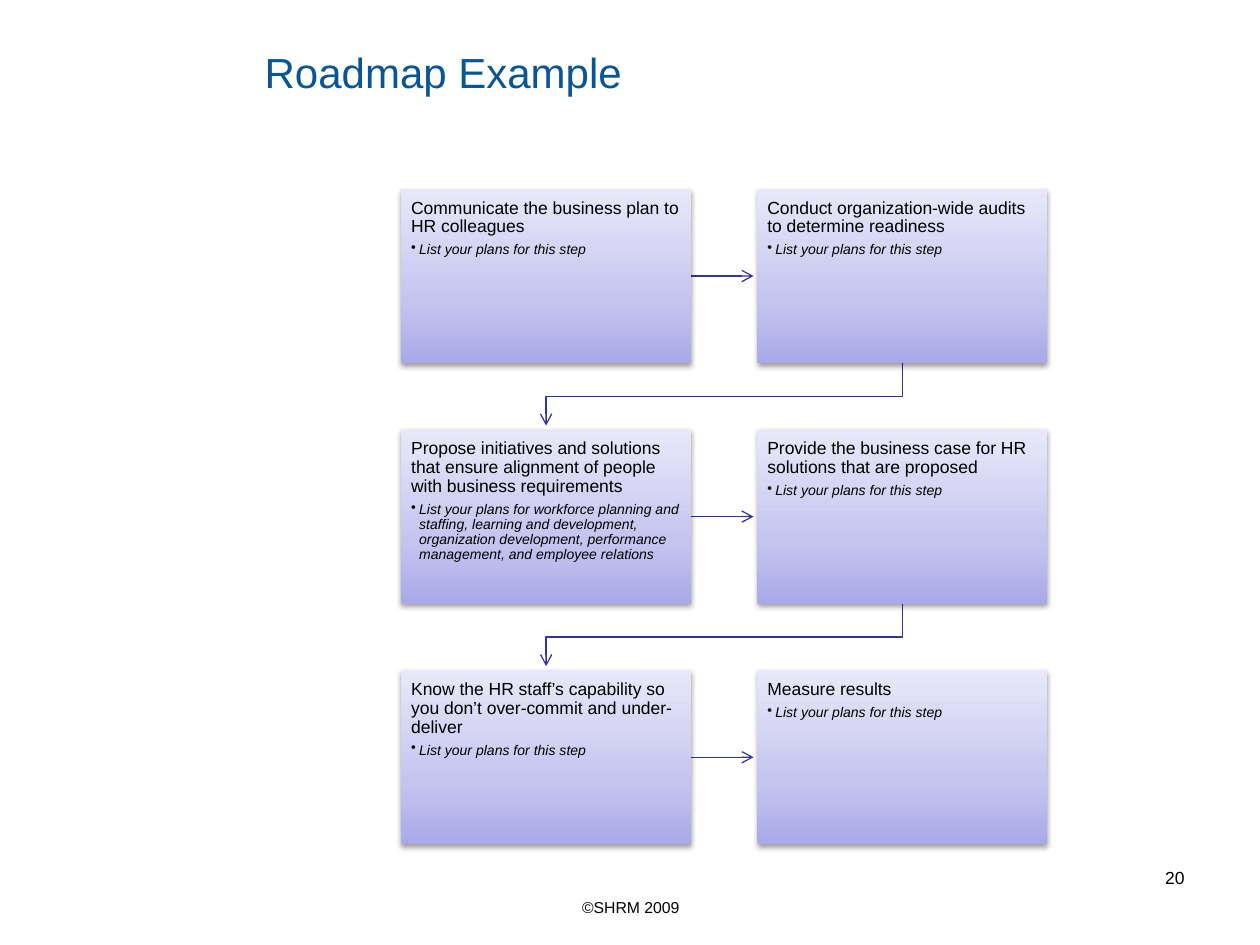
from dataclasses import dataclass

from lxml.etree import SubElement
from pptx import Presentation
from pptx.dml.color import RGBColor
from pptx.enum.shapes import MSO_CONNECTOR, MSO_SHAPE
from pptx.enum.text import MSO_ANCHOR, PP_ALIGN
from pptx.oxml.ns import qn
from pptx.util import Cm, Pt


@dataclass(frozen=True)
class Theme:
    font: str = "Arial"
    title_color: str = "0B5594"
    text_color: str = "000000"
    arrow_color: str = "333399"
    gradient: tuple = ((0, "A9A9E9"), (35, "C4C4EF"), (100, "E8E8FA"))
    title_size: float = 24
    step_size: float = 10
    plan_size: float = 8
    footer_size: float = 9
    number_size: float = 10
    arrow_width: float = 0.75


PLAN = "List your plans for this step"
STEPS = [
    ("Communicate the business plan to HR colleagues", PLAN),
    ("Conduct organization-wide audits to determine readiness", PLAN),
    ("Propose initiatives and solutions that ensure alignment of people "
     "with business requirements",
     "List your plans for workforce planning and staffing, learning and "
     "development, organization development, performance management, "
     "and employee relations"),
    ("Provide the business case for HR solutions that are proposed", PLAN),
    ("Know the HR staff’s capability so you don’t over-commit and "
     "under-deliver", PLAN),
    ("Measure results", PLAN),
]

# Step grid, in centimetres
COLUMNS = 2
LEFT, TOP = 8.09, 3.81
WIDTH, HEIGHT = 5.84, 3.51
PITCH_X, PITCH_Y = 7.18, 4.85
ARROW_GAP = 0.08
BEND = 0.67


def set_all(target, values):
    for name, value in values.items():
        setattr(target, name, value)


class RoadmapSlide:
    def __init__(self, presentation, theme):
        self.theme = theme
        self.slide = presentation.slides.add_slide(presentation.slide_layouts[5])
        self.shapes = self.slide.shapes

    def add_words(self, paragraph, text, size, color=None, italic=False):
        run = paragraph.add_run()
        run.text = text
        set_all(run.font, {"name": self.theme.font, "size": Pt(size), "italic": italic})
        run.font.color.rgb = RGBColor.from_string(color or self.theme.text_color)

    def title(self, text, left, top, width, height):
        heading = self.shapes.title
        set_all(heading, {"left": Cm(left), "top": Cm(top),
                          "width": Cm(width), "height": Cm(height)})
        set_all(heading.text_frame, {"word_wrap": True,
                                     "vertical_anchor": MSO_ANCHOR.MIDDLE})
        paragraph = heading.text_frame.paragraphs[0]
        set_all(paragraph, {"alignment": PP_ALIGN.LEFT, "space_before": Pt(0)})
        self.add_words(paragraph, text, self.theme.title_size, self.theme.title_color)

    def label(self, text, left, top, width, height, size, alignment):
        box = self.shapes.add_textbox(Cm(left), Cm(top), Cm(width), Cm(height))
        box.text_frame.word_wrap = True
        paragraph = box.text_frame.paragraphs[0]
        paragraph.alignment = alignment
        self.add_words(paragraph, text, size)

    def step(self, heading, plan, left, top):
        card = self.shapes.add_shape(MSO_SHAPE.RECTANGLE, Cm(left), Cm(top),
                                     Cm(WIDTH), Cm(HEIGHT))
        card.line.fill.background()
        self.shade(card)
        self.drop_shadow(card)

        frame = card.text_frame
        margins = ("margin_left", "margin_top", "margin_right", "margin_bottom")
        set_all(frame, {"word_wrap": True, "vertical_anchor": MSO_ANCHOR.TOP,
                        **dict.fromkeys(margins, Cm(0.2))})
        head = frame.paragraphs[0]
        set_all(head, {"alignment": PP_ALIGN.LEFT, "line_spacing": 0.9,
                       "space_after": Pt(3.5)})
        self.add_words(head, heading, self.theme.step_size)

        item = frame.add_paragraph()
        self.bullet(item)
        set_all(item, {"level": 1, "alignment": PP_ALIGN.LEFT,
                       "line_spacing": 0.9, "space_after": Pt(1.2)})
        self.add_words(item, plan, self.theme.plan_size, italic=True)

    def shade(self, card):
        card.fill.gradient()
        card.fill.gradient_angle = 90
        stops = card._element.spPr.find(qn("a:gradFill")).find(qn("a:gsLst"))
        for stop in list(stops):
            stops.remove(stop)
        for percent, color in self.theme.gradient:
            stop = SubElement(stops, qn("a:gs"), pos=str(percent * 1000))
            SubElement(stop, qn("a:srgbClr"), val=color)

    def drop_shadow(self, card):
        card.shadow.inherit = False
        effects = card._element.spPr.find(qn("a:effectLst"))
        shadow = SubElement(effects, qn("a:outerShdw"), blurRad=str(Pt(3.1)),
                            dist=str(Pt(1.6)), dir="5400000", rotWithShape="0")
        color = SubElement(shadow, qn("a:srgbClr"), val="000000")
        SubElement(color, qn("a:alpha"), val="38000")

    def bullet(self, paragraph):
        properties = paragraph._p.get_or_add_pPr()
        indent = Cm(0.16)
        properties.set("marL", str(indent))
        properties.set("indent", str(-indent))
        SubElement(properties, qn("a:buChar"), char="•")

    def style_arrow(self, arrow):
        arrow.line.color.rgb = RGBColor.from_string(self.theme.arrow_color)
        arrow.line.width = Pt(self.theme.arrow_width)
        outline = arrow._element.spPr.find(qn("a:ln"))
        SubElement(outline, qn("a:tailEnd"), type="arrow")

    def straight_arrow(self, left, y, right):
        arrow = self.shapes.add_connector(MSO_CONNECTOR.STRAIGHT,
                                          Cm(left), Cm(y), Cm(right), Cm(y))
        self.style_arrow(arrow)
        SubElement(arrow._element.spPr, qn("a:effectLst"))

    def bent_arrow(self, points):
        start, *rest = [(Cm(x), Cm(y)) for x, y in points]
        builder = self.shapes.build_freeform(*start)
        builder.add_line_segments(rest, close=False)
        arrow = builder.convert_to_shape()
        arrow.fill.background()
        self.style_arrow(arrow)
        arrow.shadow.inherit = False


def main():
    presentation = Presentation()
    set_all(presentation, {"slide_width": Cm(25.4), "slide_height": Cm(19.05)})
    theme = Theme()
    roadmap = RoadmapSlide(presentation, theme)

    # Heading
    roadmap.title("Roadmap Example", 5.08, 0.76, 19.05, 1.35)

    # Steps, each with an arrow to the next one
    for index, (heading, plan) in enumerate(STEPS):
        row, column = divmod(index, COLUMNS)
        left, top = LEFT + column * PITCH_X, TOP + row * PITCH_Y
        if column < COLUMNS - 1:
            roadmap.straight_arrow(left + WIDTH, top + HEIGHT / 2,
                                   left + PITCH_X - ARROW_GAP)
        elif index < len(STEPS) - 1:
            start_x, end_x = left + WIDTH / 2, LEFT + WIDTH / 2
            bottom = top + HEIGHT
            roadmap.bent_arrow([(start_x, bottom), (start_x, bottom + BEND),
                                (end_x, bottom + BEND),
                                (end_x, top + PITCH_Y - ARROW_GAP)])
        roadmap.step(heading, plan, left, top)

    # Footer and slide number
    roadmap.label("©SHRM 2009", 8.69, 17.98, 8.05, 0.69,
                  theme.footer_size, PP_ALIGN.CENTER)
    roadmap.label("20", 18.21, 17.35, 5.92, 1.32,
                  theme.number_size, PP_ALIGN.RIGHT)

    presentation.save("out.pptx")


if __name__ == "__main__":
    main()
